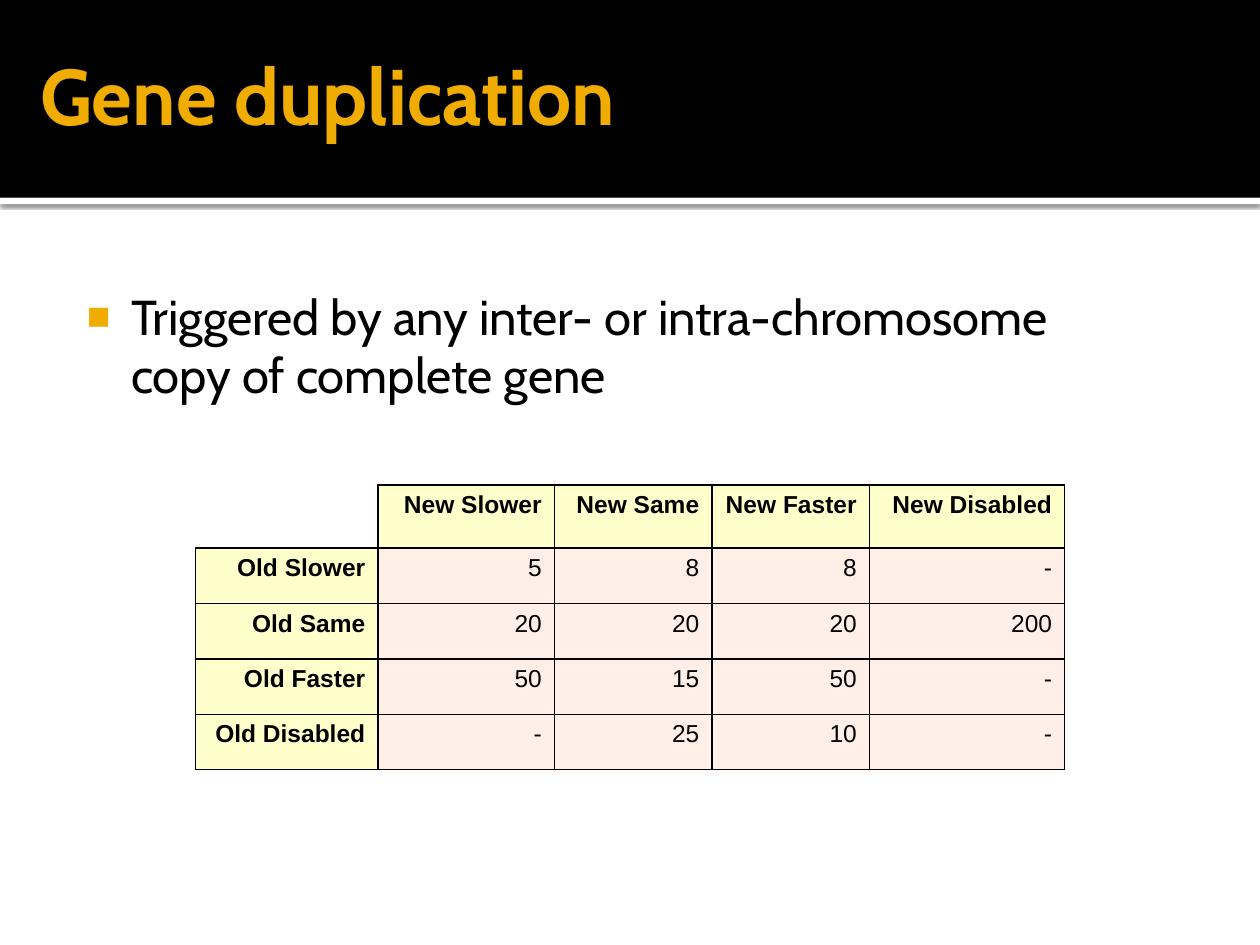
import pptx
import pptx.dml.color
import pptx.enum.shapes
import pptx.enum.text
import pptx.oxml
import pptx.oxml.ns
import pptx.util

Inches = pptx.util.Inches
Pt = pptx.util.Pt
RGBColor = pptx.dml.color.RGBColor

BLACK = RGBColor(0x00, 0x00, 0x00)
WHITE = RGBColor(0xFF, 0xFF, 0xFF)
GOLD = RGBColor(0xF0, 0xAD, 0x00)
HEADER_YELLOW = RGBColor(0xFF, 0xFF, 0xCC)
BODY_PINK = RGBColor(0xFF, 0xEF, 0xE7)

WIDTH, HEIGHT = 10, 7.5
BAND_HEIGHT = 1.57

RATES = [
    ["", "New Slower", "New Same", "New Faster", "New Disabled"],
    ["Old Slower", "5", "8", "8", "-"],
    ["Old Same", "20", "20", "20", "200"],
    ["Old Faster", "50", "15", "50", "-"],
    ["Old Disabled", "-", "25", "10", "-"],
]
COLUMN_WIDTHS = [1.45, 1.4, 1.25, 1.25, 1.55]
ROW_HEIGHTS = [0.5] + [0.44] * 4


def inches(values):
    return [Inches(value) for value in values]


def xml_element(markup):
    """Parse one drawing element, declaring the a: namespace on its tag."""
    tag, rest = markup.split(" ", 1)
    return pptx.oxml.parse_xml(f"{tag} {pptx.oxml.ns.nsdecls('a')} {rest}")


def style_run(run, font_name, size, color, bold=False):
    run.font.name = font_name
    run.font.size = Pt(size)
    run.font.color.rgb = color
    run.font.bold = bold


def add_bar(slide, box, color):
    bar = slide.shapes.add_shape(
        pptx.enum.shapes.MSO_SHAPE.RECTANGLE, *inches(box))
    bar.shadow.inherit = False
    bar.fill.solid()
    bar.fill.fore_color.rgb = color
    bar.line.fill.background()
    return bar


def add_text(slide, box, margins, text, size, color, bold=False):
    """Add a wrapped text box and return its frame; margins run left, top, right, bottom."""
    frame = slide.shapes.add_textbox(*inches(box)).text_frame
    frame.word_wrap = True
    (frame.margin_left, frame.margin_top,
     frame.margin_right, frame.margin_bottom) = inches(margins)
    frame.text = text
    style_run(frame.paragraphs[0].runs[0], "Cabin", size, color, bold)
    return frame


def add_header(slide, box):
    left, top, width, height = box
    stripe = add_bar(slide, (left, top + height, width, 0.05), WHITE)
    effects = stripe._element.spPr.find(pptx.oxml.ns.qn("a:effectLst"))
    effects.append(xml_element(
        f'<a:outerShdw blurRad="{Pt(2.5)}" dist="{Pt(0.8)}" dir="5400000" rotWithShape="0">'
        f'<a:srgbClr val="{BLACK}"><a:alpha val="60000"/></a:srgbClr></a:outerShdw>'))
    add_bar(slide, box, BLACK)
    title = add_text(slide, (left + 0.22, top, 0.9 * width, 1.5),
                     (0.1, 0.05, 0.05, 0.05), "Gene duplication", 45, GOLD, bold=True)
    title.vertical_anchor = pptx.enum.text.MSO_ANCHOR.MIDDLE


def add_bullet(slide, box):
    frame = add_text(slide, box, (0.06, 0.1, 0.1, 0.05),
                     "Triggered by any inter- or intra-chromosome copy of complete gene",
                     28, BLACK)
    properties = frame.paragraphs[0]._p.get_or_add_pPr()
    properties.set("marL", str(Inches(0.48)))
    properties.set("indent", str(Inches(-0.35)))
    for markup in (f'<a:buClr ><a:srgbClr val="{GOLD}"/></a:buClr>',
                   '<a:buSzPct val="80000"/>',
                   '<a:buFont typeface="Arial"/>',
                   '<a:buChar char="■"/>'):
        properties.append(xml_element(markup))


def set_borders(cell, visible_sides):
    """Draw thin black lines on the named sides (L, R, T, B) and none on the rest."""
    properties = cell._tc.get_or_add_tcPr()
    for index, side in enumerate("LRTB"):
        paint = (f'<a:solidFill><a:srgbClr val="{BLACK}"/></a:solidFill>'
                 if side in visible_sides else "<a:noFill/>")
        properties.insert(index, xml_element(
            f'<a:ln{side} w="{Pt(1)}">{paint}</a:ln{side}>'))


def fill_cell(cell, text, is_header):
    cell.fill.solid()
    cell.fill.fore_color.rgb = HEADER_YELLOW if is_header else BODY_PINK
    cell.text_frame.text = text
    paragraph = cell.text_frame.paragraphs[0]
    paragraph.alignment = pptx.enum.text.PP_ALIGN.RIGHT
    style_run(paragraph.runs[0], "Arial", 14, BLACK, bold=is_header)
    set_borders(cell, "LRTB")


def add_rate_table(slide, left, top):
    box = (left, top, sum(COLUMN_WIDTHS), sum(ROW_HEIGHTS))
    table = slide.shapes.add_table(
        len(ROW_HEIGHTS), len(COLUMN_WIDTHS), *inches(box)).table
    table.first_row = table.horz_banding = False
    for column, width in zip(table.columns, COLUMN_WIDTHS):
        column.width = Inches(width)
    for row, height in zip(table.rows, ROW_HEIGHTS):
        row.height = Inches(height)
    for row_index, values in enumerate(RATES):
        for column_index, text in enumerate(values):
            cell = table.cell(row_index, column_index)
            if text:
                fill_cell(cell, text, row_index == 0 or column_index == 0)
            else:
                cell.fill.background()
                set_borders(cell, "RB")


def main():
    presentation = pptx.Presentation()
    presentation.slide_width = Inches(WIDTH)
    presentation.slide_height = Inches(HEIGHT)
    slide = presentation.slides.add_slide(presentation.slide_layouts[6])
    slide.background.fill.solid()
    slide.background.fill.fore_color.rgb = WHITE
    add_header(slide, (0, 0, WIDTH, BAND_HEIGHT))
    add_bullet(slide, (0.5, 2.17, 8.35, 1.18))
    add_rate_table(slide, 1.55, 3.85)
    presentation.save("out.pptx")


if __name__ == "__main__":
    main()
